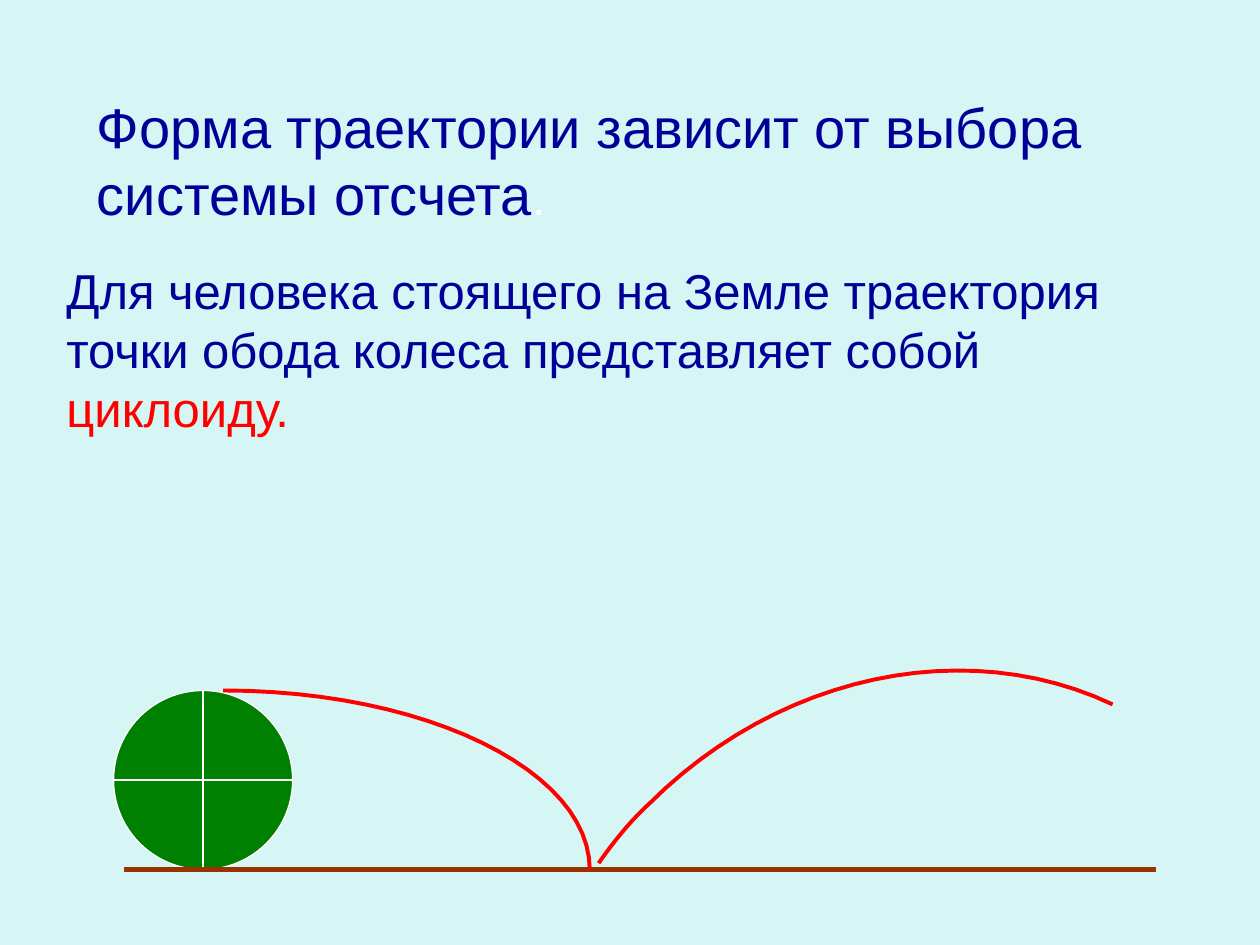
from dataclasses import dataclass

from pptx import Presentation
from pptx.dml.color import RGBColor
from pptx.enum.shapes import MSO_CONNECTOR, MSO_SHAPE
from pptx.enum.text import MSO_ANCHOR, MSO_AUTO_SIZE, PP_ALIGN
from pptx.oxml.ns import qn
from pptx.util import Cm, Pt

LINE = MSO_CONNECTOR.STRAIGHT
WHEEL = MSO_SHAPE.FLOWCHART_OR
TOP = MSO_ANCHOR.TOP
FIXED = MSO_AUTO_SIZE.NONE
LEFT = PP_ALIGN.LEFT


@dataclass(frozen=True)
class Theme:
    """Colours, font and type sizes of the slide."""
    back: str = "D6F5F5"
    ink: str = "000099"
    red: str = "FF0000"
    white: str = "FFFFFF"
    green: str = "008000"
    earth: str = "993300"
    font: str = "Arial"
    head: int = 32
    body: int = 28
    lead: float = 1.2


def color(code):
    """Turn a hex code into a colour."""
    return RGBColor.from_string(code)


def add_run(para, text, size, ink, font):
    """Add one run of text in the given format."""
    run = para.add_run()
    run.text = text
    run.font.name = font
    run.font.size = Pt(size)
    run.font.bold = False
    run.font.color.rgb = color(ink)


def bezier(start, first, second, end, steps=24):
    """Give the points of a cubic curve after its start."""
    points = []
    for step in range(1, steps + 1):
        t = step / steps
        u = 1 - t
        points.append(tuple(
            u**3 * a + 3 * u * u * t * b + 3 * u * t * t * c + t**3 * d
            for a, b, c, d in zip(start, first, second, end)))
    return points


class Board:
    """Holds the theme and the slide being drawn."""

    def __init__(self, slide, theme):
        """Set the slide, its theme and its background."""
        self.slide = slide
        self.theme = theme
        slide.background.fill.solid()
        slide.background.fill.fore_color.rgb = color(theme.back)

    def letter(self, shape, runs, size):
        """Fill a shape with one paragraph of runs."""
        frame = shape.text_frame
        frame.word_wrap = True
        frame.auto_size = FIXED
        frame.vertical_anchor = TOP
        para = frame.paragraphs[0]
        para.alignment = LEFT
        para.line_spacing = Pt(size * self.theme.lead)
        for text, points, ink in runs:
            add_run(para, text, size=points, ink=ink, font=self.theme.font)

    def title(self, box, runs):
        """Place and fill the title."""
        shape = self.slide.shapes.title
        shape.left, shape.top, shape.width, shape.height = map(Cm, box)
        self.letter(shape, runs, self.theme.head)

    def text(self, box, runs):
        """Add a text box."""
        shape = self.slide.shapes.add_textbox(*map(Cm, box))
        self.letter(shape, runs, self.theme.body)

    def stroke(self, shape, ink, width):
        """Format the line of a shape."""
        shape.line.color.rgb = color(ink)
        shape.line.width = Pt(width)

    def wheel(self, left, top, size):
        """Add the wheel with its spokes."""
        shape = self.slide.shapes.add_shape(
            WHEEL, Cm(left), Cm(top), Cm(size), Cm(size))
        shape.shadow.inherit = False
        shape.fill.solid()
        shape.fill.fore_color.rgb = color(self.theme.green)
        self.stroke(shape, self.theme.white, 0.75)

    def ground(self, left, right, level):
        """Add the line of the ground."""
        line = self.slide.shapes.add_connector(
            LINE, Cm(left), Cm(level), Cm(right), Cm(level))
        self.stroke(line, self.theme.earth, 3)
        props = line._element.spPr
        props.append(props.makeelement(qn("a:effectLst"), {}))

    def curve(self, start, *parts):
        """Add an open curve made of cubic parts."""
        points = [start]
        for part in parts:
            points += bezier(points[-1], *part)
        marks = [(Cm(x), Cm(y)) for x, y in points]
        outline = self.slide.shapes.build_freeform(*marks[0])
        outline.add_line_segments(marks[1:], close=False)
        shape = outline.convert_to_shape()
        shape.shadow.inherit = False
        shape.fill.background()
        self.stroke(shape, self.theme.red, 2.25)


def main():
    """Build and save the slide."""
    deck = Presentation()
    deck.slide_width, deck.slide_height = Cm(25.4), Cm(19.05)
    theme = Theme()
    board = Board(deck.slides.add_slide(deck.slide_layouts[5]), theme)

    board.title((1.7, 1.73, 22.2, 2.97), [
        ("Форма траектории зависит от выбора системы отсчета",
         theme.head, theme.ink),
        (".", theme.body, theme.white)])

    top, size = 13.92, 3.61
    level = top + size
    board.wheel(2.29, top, size)
    board.ground(2.5, 23.3, level)
    board.curve((4.5, top), ((8.59, top), (11.89, 15.54), (11.89, level)))
    board.curve((12.07, 17.4),
                ((12.37, 16.97), (12.7, 16.56), (13.08, 16.21)),
                ((15.7, 13.59), (19.48, 12.8), (22.43, 14.2)))

    board.text((1.09, 5.13, 23.22, 3.81), [
        ("Для человека стоящего на Земле траектория точки обода колеса "
         "представляет собой ", theme.body, theme.ink),
        ("циклоиду.", theme.body, theme.red)])
    deck.save("out.pptx")


if __name__ == "__main__":
    main()
